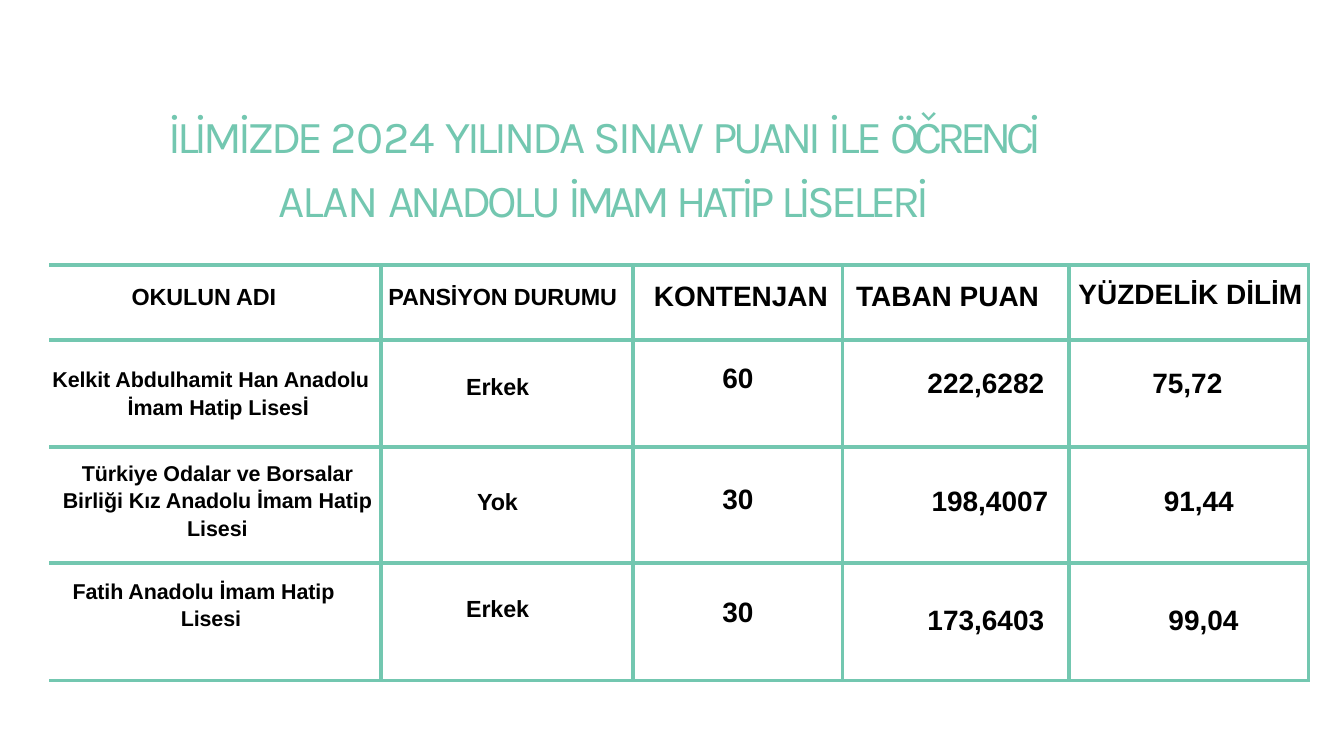
from lxml import etree
from pptx import Presentation
from pptx.dml.color import RGBColor
from pptx.enum.text import MSO_ANCHOR, MSO_AUTO_SIZE, PP_ALIGN
from pptx.oxml.ns import qn
from pptx.util import Inches, Pt

LEFT, CENTER, RIGHT = PP_ALIGN.LEFT, PP_ALIGN.CENTER, PP_ALIGN.RIGHT
TOP = MSO_ANCHOR.TOP
NO_AUTOFIT = MSO_AUTO_SIZE.NONE
TITLE_ONLY = 5

MINT, BLACK = "73C7B0", "000000"
BORDER_POINTS = 4.25

TITLE_WORDS = [
    ("İLİMİZDE ", -4), ("2024 ", -0.4), ("YILINDA ", -3.5), ("SINAV ", -2.9),
    ("PUANI ", -4.5), ("İLE ", -2.8), ("ÖČRENCİ ", -5.8), ("ALAN ", -1.6),
    ("ANADOLU ", -3.9), ("İMAM ", -5.2), ("HATİP ", -4.6), ("LİSELERİ", -4.2),
]

COLUMN_WIDTHS = [4.94, 3.75, 3.12, 3.37, 3.56]
ROW_HEIGHTS = [1.12, 1.59, 1.73, 1.75]
HEADER_SIZES = [25, 25, 30, 30, 30]
BODY_SIZES = [23, 25, 30, 30, 30]
BODY_ALIGNS = [LEFT, CENTER, CENTER, RIGHT, CENTER]

# Each cell: text, top margin, left margin, right margin
HEADER = [
    ("OKULUN ADI", 0.29, 1.23, 0),
    ("PANSİYON DURUMU", 0.29, 0.11, 0),
    ("KONTENJAN", 0.25, 0.31, 0),
    ("TABAN PUAN", 0.25, 0.2, 0),
    ("YÜZDELİK DİLİM", 0.21, 0.14, 0),
]
SCHOOLS = [
    [("Kelkit Abdulhamit Han Anadolu İmam Hatip Lisesİ", 0.37, 0, 0),
     ("Erkek", 0.51, 0, 0.28), ("60", 0.35, 0, 0),
     ("222,6282", 0.42, 0, 0.37), ("75,72", 0.42, 0, 0.04)],
    [("Türkiye Odalar ve Borsalar Birliği Kız Anadolu İmam Hatip Lisesi", 0.17, 0.14, 0.07),
     ("Yok", 0.63, 0, 0.28), ("30", 0.55, 0, 0),
     ("198,4007", 0.59, 0, 0.31), ("91,44", 0.59, 0.3, 0)],
    [("Fatih Anadolu İmam Hatip Lisesi", 0.2, 0, 0),
     ("Erkek", 0.49, 0, 0.28), ("30", 0.5, 0, 0),
     ("173,6403", 0.63, 0, 0.37), ("99,04", 0.63, 0.44, 0)],
]
NAME_INDENTS = [(1.17, -1.12), None, (1.96, -1.61)]


def color(value):
    return RGBColor.from_string(value)


def format_span(span, font, size, fill, bold=False, spacing=0):
    span.font.name = font
    span.font.size = Pt(size)
    span.font.bold = bold
    span.font.color.rgb = color(fill)
    span.font._element.set("spc", str(round(spacing * 100)))


def indent(para, left, first):
    properties = para._p.get_or_add_pPr()
    properties.set("marL", str(Inches(left)))
    properties.set("indent", str(Inches(first)))


def set_borders(cell, first_column):
    properties = cell._tc.get_or_add_tcPr()
    for side in ("lnL", "lnR", "lnT", "lnB"):
        line = etree.SubElement(properties, qn(f"a:{side}"), w=str(Pt(BORDER_POINTS)))
        if side == "lnL" and first_column:
            etree.SubElement(line, qn("a:noFill"))
        else:
            fill = etree.SubElement(line, qn("a:solidFill"))
            etree.SubElement(fill, qn("a:srgbClr"), val=MINT)


def add_title(page, left, top, width, height):
    box = page.shapes.title
    box.left, box.top = Inches(left), Inches(top)
    box.width, box.height = Inches(width), Inches(height)
    frame = box.text_frame
    frame.word_wrap = True
    frame.auto_size = NO_AUTOFIT
    frame.vertical_anchor = TOP
    frame.margin_left = frame.margin_bottom = 0
    frame.margin_top, frame.margin_right = Inches(0.68), Inches(1)
    para = frame.paragraphs[0]
    para.alignment = LEFT
    para.line_spacing = 1.17
    indent(para, 1.87, -1.64)
    for word, spacing in TITLE_WORDS:
        span = para.add_run()
        span.text = word
        format_span(span, "Karla", 49, MINT, spacing=spacing)


def fill_cell(cell, content, size, alignment, first_column):
    text, top, left, right = content
    cell.margin_top, cell.margin_bottom = Inches(top), 0
    cell.margin_left, cell.margin_right = Inches(left), Inches(right)
    cell.vertical_anchor = TOP
    set_borders(cell, first_column)
    cell.fill.background()
    para = cell.text_frame.paragraphs[0]
    para.text = text
    para.alignment = alignment
    format_span(para.runs[0], "Arial", size, BLACK, True, -0.1 if size < 30 else 0)
    return para


def add_school_table(page, left, top, width, height):
    table = page.shapes.add_table(
        len(ROW_HEIGHTS), len(COLUMN_WIDTHS),
        Inches(left), Inches(top), Inches(width), Inches(height)).table
    table.first_row = table.horz_banding = False
    for column, size in zip(table.columns, COLUMN_WIDTHS):
        column.width = Inches(size)
    for row, size in zip(table.rows, ROW_HEIGHTS):
        row.height = Inches(size)

    for c, content in enumerate(HEADER):
        fill_cell(table.cell(0, c), content, HEADER_SIZES[c], LEFT, c == 0)
    for r, (school, hanging) in enumerate(zip(SCHOOLS, NAME_INDENTS), start=1):
        for c, content in enumerate(school):
            alignment = CENTER if c == 0 and not hanging else BODY_ALIGNS[c]
            para = fill_cell(table.cell(r, c), content, BODY_SIZES[c], alignment, c == 0)
            if c == 0:
                para.line_spacing = 1.14
                if hanging:
                    indent(para, *hanging)


def main():
    deck = Presentation()
    deck.slide_width, deck.slide_height = Inches(20), Inches(11.25)
    page = deck.slides.add_slide(deck.slide_layouts[TITLE_ONLY])
    add_title(page, 2.27, 0.78, 15.45, 2.61)
    add_school_table(page, 0.73, 3.94, sum(COLUMN_WIDTHS), sum(ROW_HEIGHTS))
    deck.save("out.pptx")


if __name__ == "__main__":
    main()
